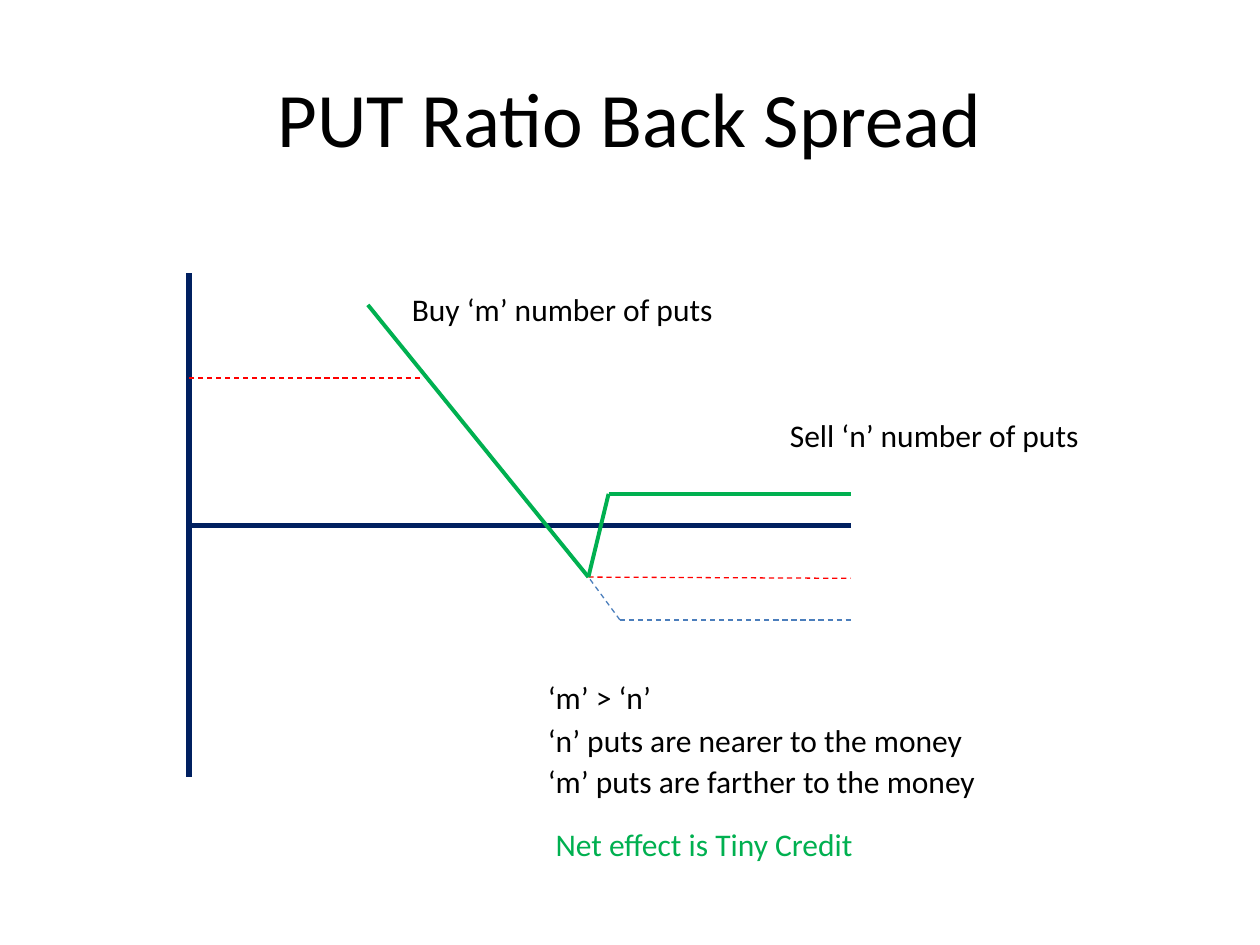
from dataclasses import dataclass

from lxml import etree
from pptx import Presentation
from pptx.dml.color import RGBColor
from pptx.enum.dml import MSO_LINE
from pptx.enum.shapes import MSO_CONNECTOR
from pptx.enum.text import MSO_ANCHOR, MSO_AUTO_SIZE, PP_ALIGN
from pptx.oxml.ns import qn
from pptx.slide import Slide
from pptx.text.text import Font
from pptx.util import Inches, Pt

STRAIGHT = MSO_CONNECTOR.STRAIGHT
DASH = MSO_LINE.DASH
MIDDLE = MSO_ANCHOR.MIDDLE
GROW = MSO_AUTO_SIZE.SHAPE_TO_FIT_TEXT
CENTER = PP_ALIGN.CENTER

BLACK = RGBColor(0x00, 0x00, 0x00)
NAVY = RGBColor(0x00, 0x20, 0x60)
GREEN = RGBColor(0x00, 0xB0, 0x50)
RED = RGBColor(0xFF, 0x00, 0x00)
BLUE = RGBColor(0x4B, 0x7E, 0xBC)

Point = tuple[float, float]


@dataclass(frozen=True)
class LineStyle:
    color: RGBColor
    weight: float
    dashed: bool = False


@dataclass(frozen=True)
class Segment:
    start: Point
    end: Point
    style: LineStyle


@dataclass(frozen=True)
class Label:
    text: str
    left: float
    top: float
    width: float
    color: RGBColor = BLACK
    inset: float = 0.1


AXIS = LineStyle(NAVY, 3)
PAYOFF = LineStyle(GREEN, 2.25)
LEVEL = LineStyle(RED, 0.75, True)
LONG_PUT = LineStyle(BLUE, 0.75, True)

AXIS_X = 1.5
RIGHT_X = 6.75
MAX_LOSS = (4.67, 4.58)
SHORT_STRIKE = (4.83, 3.92)
LONG_STRIKE = (4.92, 4.92)

SEGMENTS = [
    Segment((AXIS_X, 4.17), (RIGHT_X, 4.17), AXIS),
    Segment((AXIS_X, 2.17), (AXIS_X, 6.17), AXIS),
    Segment(LONG_STRIKE, (RIGHT_X, 4.92), LONG_PUT),
    Segment(MAX_LOSS, (2.92, 2.42), PAYOFF),
    Segment(MAX_LOSS, (RIGHT_X, 4.59), LEVEL),
    Segment((AXIS_X, 3), (3.33, 3), LEVEL),
    Segment(SHORT_STRIKE, (RIGHT_X, 3.92), PAYOFF),
    Segment(SHORT_STRIKE, MAX_LOSS, PAYOFF),
    Segment(LONG_STRIKE, MAX_LOSS, LONG_PUT),
]

NOTES_X = 4.25
LABELS = [
    Label("Buy ‘m’ number of puts", 3.17, 2.25, 2.75),
    Label("Sell ‘n’ number of puts", 6.17, 3.25, 2.75),
    Label("‘m’ > ‘n’", NOTES_X, 5.33, 2.75),
    Label("‘n’ puts are nearer to the money", NOTES_X, 5.67, 3.58),
    Label("‘m’ puts are farther to the money", NOTES_X, 6, 4),
    Label("Net effect is Tiny Credit", NOTES_X, 6.5, 4, GREEN, 0.16),
]


def set_font(font: Font, size: float, color: RGBColor) -> None:
    font.name = "Calibri"
    font.size = Pt(size)
    font.color.rgb = color


def add_title(slide: Slide, text: str) -> None:
    title = slide.shapes.title
    title.left, title.top = Inches(0.5), Inches(0.3)
    title.width, title.height = Inches(9), Inches(1.25)
    title.text_frame.text = text
    title.text_frame.vertical_anchor = MIDDLE
    heading = title.text_frame.paragraphs[0]
    heading.alignment = CENTER
    set_font(heading.font, 44, BLACK)


def add_segment(slide: Slide, segment: Segment) -> None:
    ends = [Inches(value) for value in segment.start + segment.end]
    connector = slide.shapes.add_connector(STRAIGHT, *ends)
    connector.line.color.rgb = segment.style.color
    connector.line.width = Pt(segment.style.weight)
    if segment.style.dashed:
        connector.line.dash_style = DASH
    etree.SubElement(connector._element.spPr, qn("a:effectLst"))


def add_label(slide: Slide, label: Label) -> None:
    box = slide.shapes.add_textbox(
        Inches(label.left), Inches(label.top), Inches(label.width), Inches(0.4)
    )
    frame = box.text_frame
    frame.word_wrap = True
    frame.auto_size = GROW
    frame.margin_left = Inches(label.inset)
    frame.text = label.text
    set_font(frame.paragraphs[0].font, 18, label.color)


def main() -> None:
    presentation = Presentation()
    presentation.slide_width = Inches(10)
    presentation.slide_height = Inches(7.5)
    slide = presentation.slides.add_slide(
        presentation.slide_layouts.get_by_name("Title Only")
    )
    add_title(slide, "PUT Ratio Back Spread")
    for segment in SEGMENTS:
        add_segment(slide, segment)
    for label in LABELS:
        add_label(slide, label)
    presentation.save("out.pptx")


if __name__ == "__main__":
    main()
